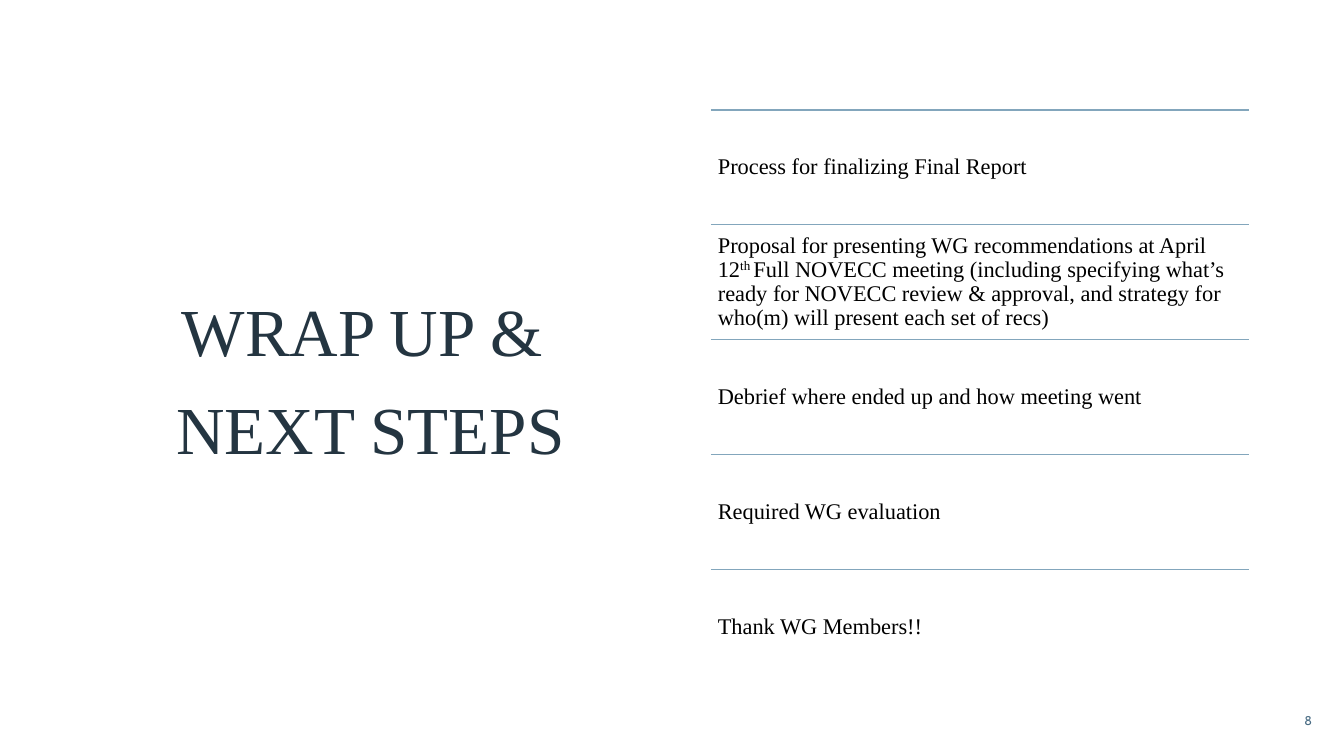
from lxml import etree
from pptx import Presentation
from pptx.dml.color import RGBColor
from pptx.enum.shapes import MSO_CONNECTOR
from pptx.enum.text import MSO_ANCHOR, PP_ALIGN
from pptx.oxml.ns import qn
from pptx.util import Inches, Pt

LEFT, CENTER, RIGHT = PP_ALIGN.LEFT, PP_ALIGN.CENTER, PP_ALIGN.RIGHT
MIDDLE = MSO_ANCHOR.MIDDLE
STRAIGHT = MSO_CONNECTOR.STRAIGHT

# Content: a paragraph is a list of (text, superscript) runs
TITLE = [[("WRAP UP & ", False)], [("NEXT STEPS", False)]]
STEPS = [
    [("Process for finalizing Final Report", False)],
    [("Proposal for presenting WG recommendations at April 12", False),
     ("th ", True),
     ("Full NOVECC meeting (including specifying what’s ready for NOVECC "
      "review & approval, and strategy for who(m) will present each set of recs)", False)],
    [("Debrief where ended up and how meeting went", False)],
    [("Required WG evaluation", False)],
    [("Thank WG Members!!", False)],
]
PAGE = [[("8", False)]]

# Layout in inches
WIDTH, HEIGHT = 13.33, 7.5
TOP, ROW = 1.09, 1.14
LIST_LEFT, LIST_WIDTH = 7.05, 5.34
SERIF = "Times New Roman"


def rgb(value):
    return RGBColor.from_string(value)


def add_text(s, paragraphs, x, y, w, h, size, color, font=SERIF,
             align=LEFT, before=0, spacing=1.0, inset=(0.1, 0.05)):
    tf = s.shapes.add_textbox(Inches(x), Inches(y), Inches(w), Inches(h)).text_frame
    tf.word_wrap = True
    tf.vertical_anchor = MIDDLE
    tf.margin_left = tf.margin_right = Inches(inset[0])
    tf.margin_top = tf.margin_bottom = Inches(inset[1])
    for i, runs in enumerate(paragraphs):
        p = tf.add_paragraph() if i else tf.paragraphs[0]
        p.alignment = align
        p.space_before = Pt(before)
        p.line_spacing = spacing
        for text, raised in runs:
            r = p.add_run()
            r.text = text
            r.font.size = Pt(size)
            r.font.name = font
            r.font.color.rgb = rgb(color)
            if raised:
                r.font._element.set("baseline", "30000")


def add_rule(s, x, y, w, color):
    line = s.shapes.add_connector(STRAIGHT, Inches(x), Inches(y), Inches(x + w), Inches(y))
    line.line.color.rgb = rgb(color)
    line.line.width = Pt(1)
    etree.SubElement(line._element.spPr, qn("a:effectLst"))


def main():
    prs = Presentation()
    prs.slide_width, prs.slide_height = Inches(WIDTH), Inches(HEIGHT)
    s = prs.slides.add_slide(prs.slide_layouts[6])

    # Title
    add_text(s, TITLE, 0.3, TOP, 6.75, 5.33, size=48, color="243541",
             align=CENTER, before=12)

    # Ruled list of steps
    for i, step in enumerate(STEPS):
        y = TOP + i * ROW
        add_rule(s, LIST_LEFT, y, LIST_WIDTH, "83A6BC")
        add_text(s, [step], LIST_LEFT, y, LIST_WIDTH, ROW, size=16,
                 color="000000", spacing=0.9, inset=(0.07, 0.07))

    # Page number
    add_text(s, PAGE, 12.16, 6.95, 0.95, 0.4, size=9, color="486B83",
             font="Cabin", align=RIGHT)
    prs.save("out.pptx")


if __name__ == "__main__":
    main()
